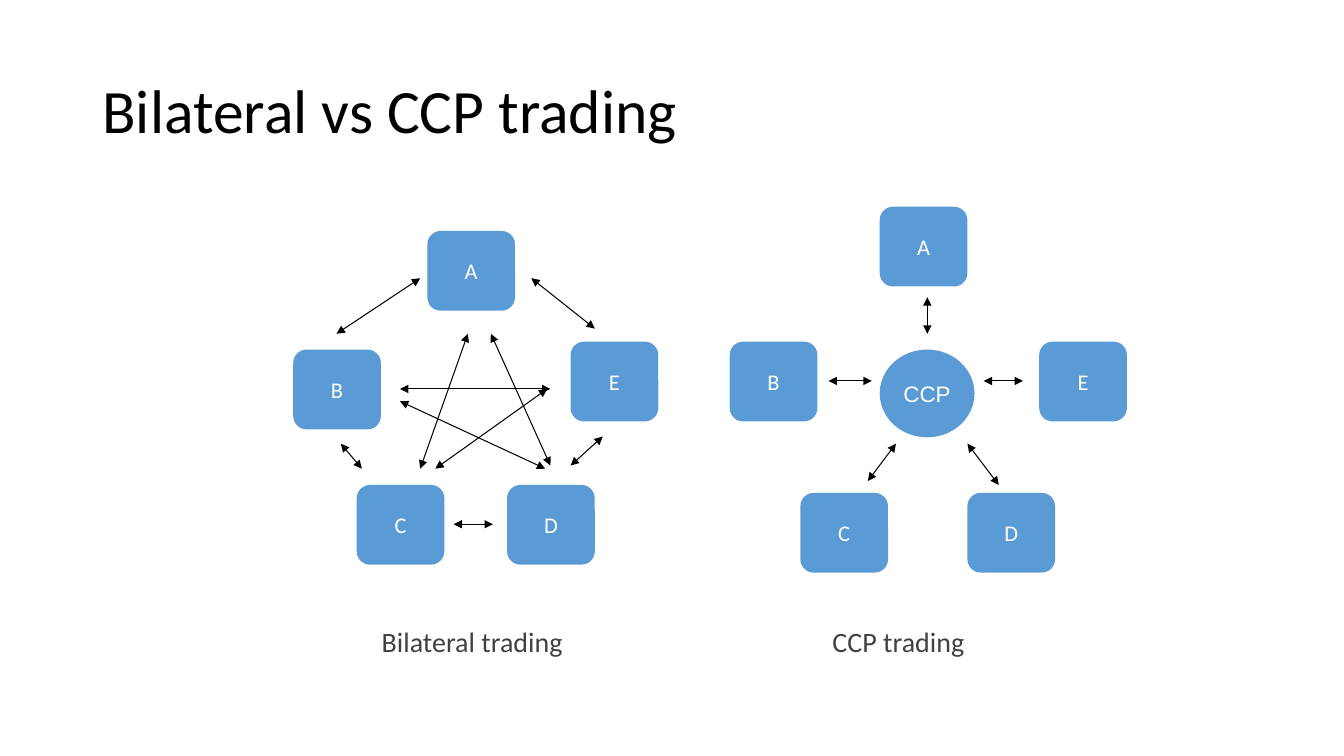
from dataclasses import dataclass

from lxml.etree import SubElement
from pptx import Presentation
from pptx.dml.color import RGBColor
from pptx.enum.shapes import MSO_CONNECTOR, MSO_SHAPE
from pptx.enum.text import MSO_ANCHOR, MSO_AUTO_SIZE, PP_ALIGN
from pptx.oxml.ns import qn
from pptx.slide import Slide
from pptx.text.text import TextFrame
from pptx.util import Cm, Pt

BLACK = RGBColor(0x00, 0x00, 0x00)
WHITE = RGBColor(0xFF, 0xFF, 0xFF)
BLUE = RGBColor(0x5B, 0x9B, 0xD5)
GREY = RGBColor(0x41, 0x40, 0x42)


@dataclass(frozen=True)
class Node:
    label: str
    left: float
    top: float
    width: float = 2.21
    height: float = 2.01
    shape: MSO_SHAPE = MSO_SHAPE.ROUNDED_RECTANGLE
    font: str = "Calibri"


@dataclass(frozen=True)
class Arrow:
    start_x: float
    start_y: float
    end_x: float
    end_y: float


@dataclass(frozen=True)
class Caption:
    label: str
    left: float
    width: float


@dataclass(frozen=True)
class Network:
    nodes: list[Node]
    arrows: list[Arrow]
    caption: Caption


BILATERAL = Network(
    nodes=[
        Node("A", 10.77, 5.82),
        Node("B", 7.39, 8.81),
        Node("C", 8.99, 12.22),
        Node("D", 12.78, 12.22),
        Node("E", 14.38, 8.61),
    ],
    arrows=[
        Arrow(10.59, 11.81, 11.79, 8.41),
        Arrow(10.97, 11.81, 13.79, 9.8),
        Arrow(8.48, 8.41, 10.59, 7.01),
        Arrow(13.39, 7.01, 14.99, 8.28),
        Arrow(9.12, 11.81, 8.59, 11.18),
        Arrow(10.08, 9.8, 13.87, 9.8),
        Arrow(10.08, 10.11, 13.74, 11.81),
        Arrow(14.38, 11.73, 15.19, 11.0),
        Arrow(11.43, 13.21, 12.42, 13.21),
        Arrow(13.87, 11.73, 12.37, 8.41),
    ],
    caption=Caption("Bilateral trading", 9.37, 5.13),
)

CENTRAL = Network(
    nodes=[
        Node("A", 22.17, 5.21),
        Node("B", 18.39, 8.61),
        Node("C", 20.17, 12.42),
        Node("D", 24.38, 12.42),
        Node("E", 26.19, 8.61),
        Node("CCP", 22.17, 8.81, 2.39, 2.21, MSO_SHAPE.OVAL, "Arial"),
    ],
    arrows=[
        Arrow(20.88, 9.6, 21.97, 9.6),
        Arrow(25.17, 12.22, 24.38, 11.18),
        Arrow(23.37, 7.49, 23.37, 8.41),
        Arrow(21.87, 12.12, 22.58, 11.18),
        Arrow(25.78, 9.6, 24.79, 9.6),
    ],
    caption=Caption("CCP trading", 20.73, 3.86),
)


def write_text(
    frame: TextFrame,
    text: str,
    *,
    size: float,
    color: RGBColor,
    font: str = "Calibri",
    align: PP_ALIGN = PP_ALIGN.LEFT,
    anchor: MSO_ANCHOR = MSO_ANCHOR.MIDDLE,
    line_spacing: float = 1.0,
    wrap: bool = True,
    auto_size: MSO_AUTO_SIZE = MSO_AUTO_SIZE.NONE,
) -> None:
    frame.word_wrap = wrap
    frame.auto_size = auto_size
    frame.vertical_anchor = anchor
    para = frame.paragraphs[0]
    para.alignment = align
    para.line_spacing = line_spacing
    span = para.add_run()
    span.text = text
    span.font.name = font
    span.font.size = Pt(size)
    span.font.color.rgb = color


def draw_node(page: Slide, node: Node) -> None:
    box = page.shapes.add_shape(
        node.shape, Cm(node.left), Cm(node.top), Cm(node.width), Cm(node.height)
    )
    box.shadow.inherit = False
    box.fill.solid()
    box.fill.fore_color.rgb = BLUE
    box.line.fill.background()
    write_text(box.text_frame, node.label, size=16, color=WHITE,
               font=node.font, align=PP_ALIGN.CENTER)


def draw_arrow(page: Slide, arrow: Arrow) -> None:
    """Draw a thin line with a triangle at both ends."""
    connector = page.shapes.add_connector(
        MSO_CONNECTOR.STRAIGHT,
        Cm(arrow.start_x), Cm(arrow.start_y), Cm(arrow.end_x), Cm(arrow.end_y),
    )
    connector.line.color.rgb = BLACK
    connector.line.width = Pt(0.75)
    properties = connector.element.spPr
    outline = properties.find(qn("a:ln"))
    for end in ("a:headEnd", "a:tailEnd"):
        SubElement(outline, qn(end), type="triangle")
    SubElement(properties, qn("a:effectLst"))


def draw_caption(page: Slide, caption: Caption) -> None:
    box = page.shapes.add_textbox(
        Cm(caption.left), Cm(15.62), Cm(caption.width), Cm(1.12)
    )
    write_text(box.text_frame, caption.label, size=20, color=GREY,
               anchor=MSO_ANCHOR.TOP, wrap=False,
               auto_size=MSO_AUTO_SIZE.SHAPE_TO_FIT_TEXT)


def draw_network(page: Slide, network: Network) -> None:
    for node in network.nodes:
        draw_node(page, node)
    for arrow in network.arrows:
        draw_arrow(page, arrow)
    draw_caption(page, network.caption)


def main() -> None:
    deck = Presentation()
    deck.slide_width, deck.slide_height = Cm(33.87), Cm(19.05)
    page = deck.slides.add_slide(deck.slide_layouts.get_by_name("Title Only"))
    title = page.shapes.title
    title.left, title.top = Cm(2.33), Cm(1.02)
    title.width, title.height = Cm(29.21), Cm(3.68)
    write_text(title.text_frame, "Bilateral vs CCP trading", size=44,
               color=BLACK, line_spacing=0.9)
    for network in (BILATERAL, CENTRAL):
        draw_network(page, network)
    deck.save("out.pptx")


if __name__ == "__main__":
    main()
